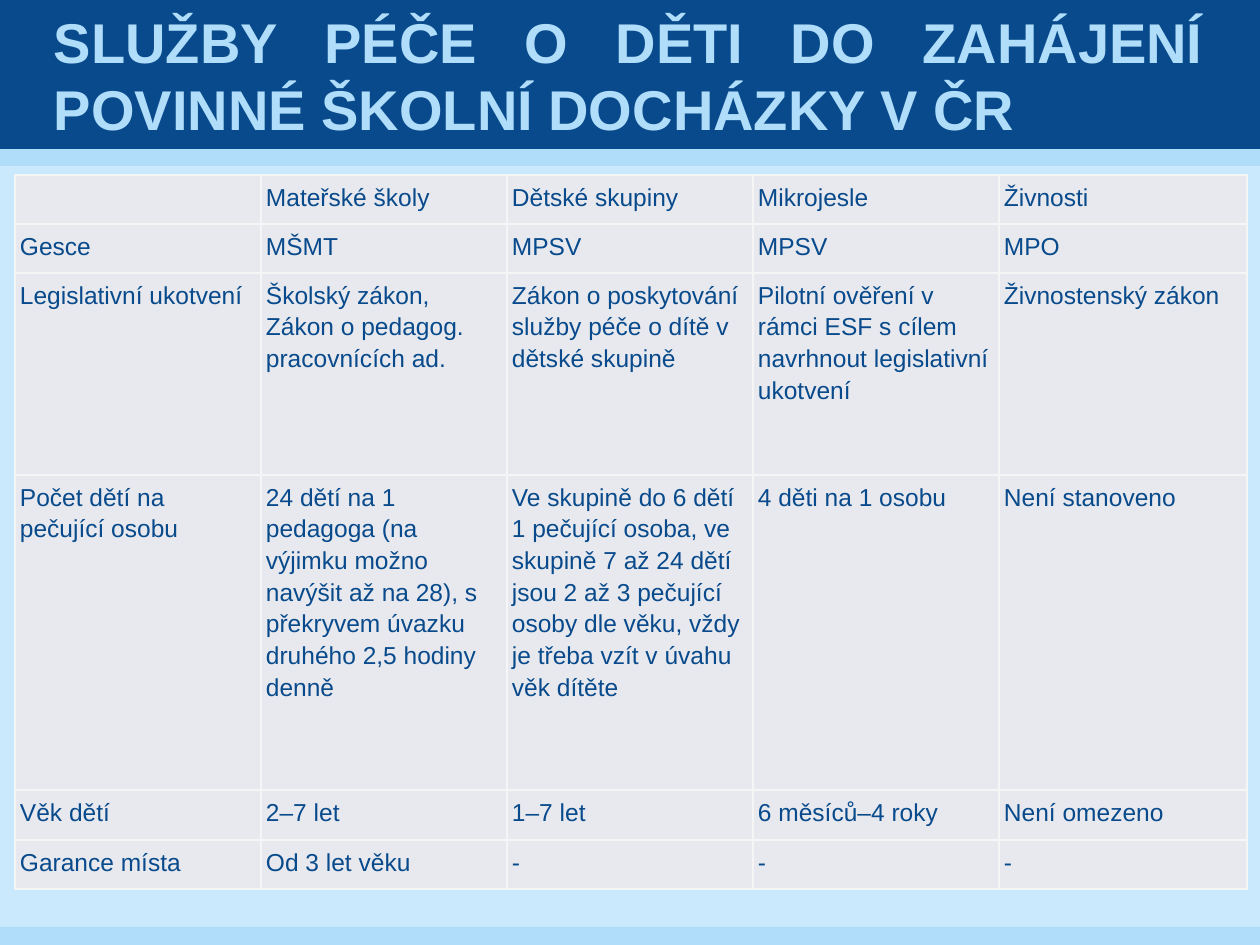
from dataclasses import dataclass

from lxml import etree
from pptx import Presentation
from pptx.dml.color import RGBColor
from pptx.enum.shapes import MSO_SHAPE
from pptx.enum.text import MSO_ANCHOR, PP_ALIGN
from pptx.oxml.ns import qn
from pptx.util import Pt

RECTANGLE = MSO_SHAPE.RECTANGLE
MIDDLE = MSO_ANCHOR.MIDDLE
JUSTIFY = PP_ALIGN.JUSTIFY

TITLE = "SLUŽBY PÉČE O DĚTI DO ZAHÁJENÍ POVINNÉ ŠKOLNÍ DOCHÁZKY V ČR"
SERVICES = [
    ["", "Mateřské školy", "Dětské skupiny", "Mikrojesle", "Živnosti"],
    ["Gesce", "MŠMT", "MPSV", "MPSV", "MPO"],
    [
        "Legislativní ukotvení",
        "Školský zákon, Zákon o pedagog. pracovnících ad.",
        "Zákon o poskytování služby péče o dítě v dětské skupině",
        "Pilotní ověření v rámci ESF s cílem navrhnout legislativní ukotvení",
        "Živnostenský zákon",
    ],
    [
        "Počet dětí na pečující osobu",
        "24 dětí na 1 pedagoga (na výjimku možno navýšit až na 28), "
        "s překryvem úvazku druhého 2,5 hodiny denně",
        "Ve skupině do 6 dětí 1 pečující osoba, ve skupině 7 až 24 dětí jsou "
        "2 až 3 pečující osoby dle věku, vždy je třeba vzít v úvahu věk dítěte",
        "4 děti na 1 osobu",
        "Není stanoveno",
    ],
    ["Věk dětí", "2–7 let", "1–7 let", "6 měsíců–4 roky", "Není omezeno"],
    ["Garance místa", "Od 3 let věku", "-", "-", "-"],
]


@dataclass(frozen=True)
class Theme:
    font: str = "Arial"
    dark: str = "084A8B"
    light: str = "AFDDFA"
    background: str = "CAE9FC"
    cell: str = "E7E9EE"
    border: str = "F5F5F5"
    title_size: int = 32
    cell_size: int = 14


THEME = Theme()

# Lengths in px, 126 to the inch
EMU_PER_PX = 914400 / 126
PAGE_WIDTH, PAGE_HEIGHT = 1260, 945
HEADER_HEIGHT = 149
BANDS = [  # top, height, colour
    (HEADER_HEIGHT, 17, THEME.light),
    (0, HEADER_HEIGHT, THEME.dark),
    (927, 18, THEME.light),
]
TITLE_LEFT, TITLE_WIDTH = 49, 1160
TABLE_LEFT, TABLE_TOP = 15, 175
COLUMN_WIDTHS = [246] * 4 + [248]
ROW_HEIGHTS = [49, 49, 202, 315, 50, 49]
INSET = 5


def px(length):
    return round(length * EMU_PER_PX)


def paint(fill, colour):
    fill.solid()
    fill.fore_color.rgb = RGBColor.from_string(colour)


def style_font(paragraph, size, colour, bold=False):
    for span in paragraph.runs:
        span.font.name = THEME.font
        span.font.size = Pt(size)
        span.font.bold = bold
        span.font.color.rgb = RGBColor.from_string(colour)


def add_band(page, top, height, colour):
    band = page.shapes.add_shape(RECTANGLE, 0, px(top), px(PAGE_WIDTH), px(height))
    band.shadow.inherit = False
    paint(band.fill, colour)
    band.line.fill.background()


def add_title(page):
    box = page.shapes.add_textbox(
        px(TITLE_LEFT), 0, px(TITLE_WIDTH), px(HEADER_HEIGHT)
    )
    frame = box.text_frame
    frame.word_wrap = True
    frame.vertical_anchor = MIDDLE
    frame.margin_left = frame.margin_right = px(INSET)
    frame.margin_top = frame.margin_bottom = 0
    frame.text = TITLE
    paragraph = frame.paragraphs[0]
    paragraph.alignment = JUSTIFY
    style_font(paragraph, THEME.title_size, THEME.light, bold=True)


def add_borders(cell):
    properties = cell._tc.get_or_add_tcPr()
    for side in ("a:lnL", "a:lnR", "a:lnT", "a:lnB"):
        line = etree.SubElement(properties, qn(side), w=str(Pt(1)))
        fill = etree.SubElement(line, qn("a:solidFill"))
        etree.SubElement(fill, qn("a:srgbClr"), val=THEME.border)


def fill_cell(cell, text):
    add_borders(cell)
    paint(cell.fill, THEME.cell)
    cell.margin_left = cell.margin_right = px(INSET)
    cell.margin_top = cell.margin_bottom = px(INSET)
    cell.text_frame.text = text
    paragraph = cell.text_frame.paragraphs[0]
    if text:
        paragraph.line_spacing = 1.15
        paragraph.space_before = Pt(6)
        paragraph.space_after = Pt(9)
    style_font(paragraph, THEME.cell_size, THEME.dark)


def add_services_table(page):
    table = page.shapes.add_table(
        len(ROW_HEIGHTS), len(COLUMN_WIDTHS), px(TABLE_LEFT), px(TABLE_TOP),
        px(sum(COLUMN_WIDTHS)), px(sum(ROW_HEIGHTS)),
    ).table
    table.first_row = table.horz_banding = False
    for column, width in zip(table.columns, COLUMN_WIDTHS):
        column.width = px(width)
    for row, height, texts in zip(table.rows, ROW_HEIGHTS, SERVICES):
        row.height = px(height)
        for cell, text in zip(row.cells, texts):
            fill_cell(cell, text)


def main():
    deck = Presentation()
    deck.slide_width, deck.slide_height = px(PAGE_WIDTH), px(PAGE_HEIGHT)
    page = deck.slides.add_slide(deck.slide_layouts[6])
    paint(page.background.fill, THEME.background)
    for band in BANDS:
        add_band(page, *band)
    add_title(page)
    add_services_table(page)
    deck.save("out.pptx")


if __name__ == "__main__":
    main()
